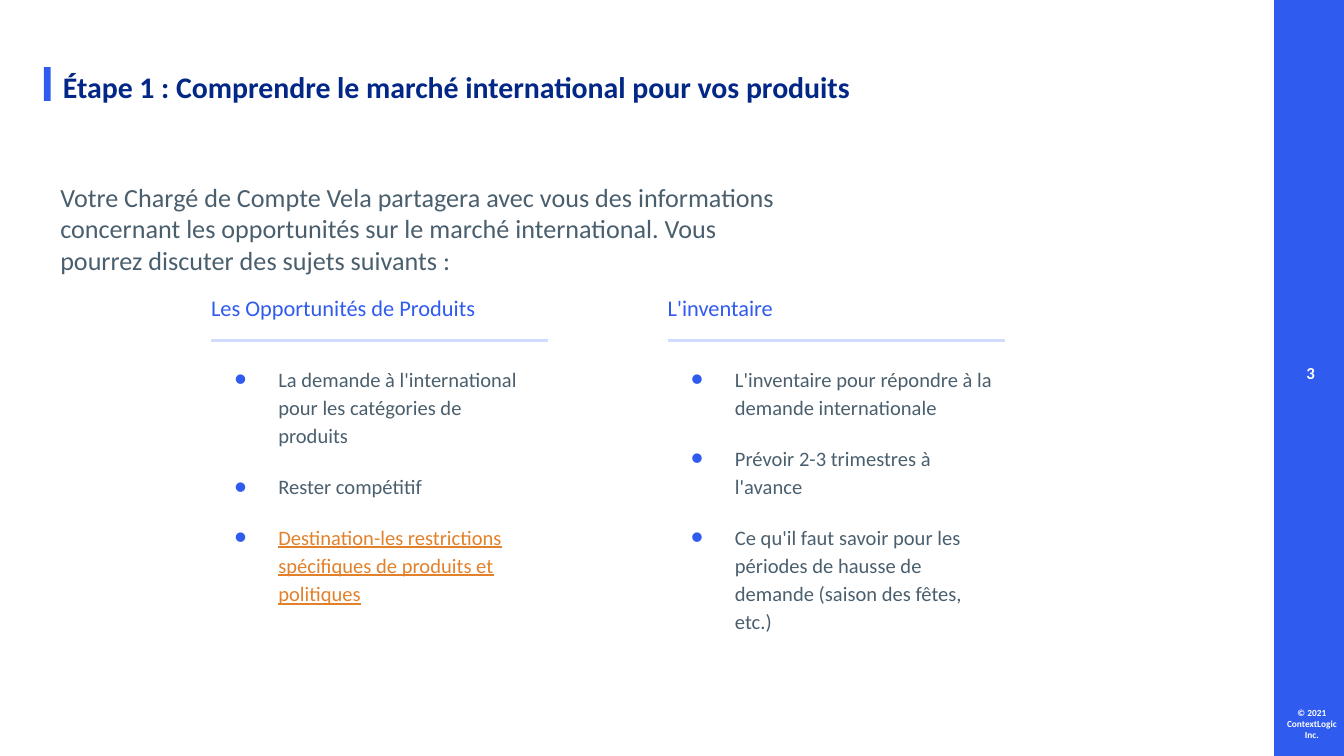
from lxml import etree
from pptx import Presentation
from pptx.dml.color import RGBColor
from pptx.enum.shapes import MSO_CONNECTOR, MSO_SHAPE
from pptx.enum.text import MSO_ANCHOR, MSO_AUTO_SIZE, PP_ALIGN
from pptx.oxml.ns import qn
from pptx.util import Cm, Pt

LEFT, CENTER = PP_ALIGN.LEFT, PP_ALIGN.CENTER
TOP, NO_FIT = MSO_ANCHOR.TOP, MSO_AUTO_SIZE.NONE
RECT, STRAIGHT = MSO_SHAPE.RECTANGLE, MSO_CONNECTOR.STRAIGHT

FONT = "Calibri"
BLUE, NAVY, PALE = "305BEF", "022786", "D0DBFF"
GREY, ORANGE, WHITE = "4A5F6E", "E3812B", "FFFFFF"
WIDTH, HEIGHT = 25.4, 14.29
PAD = 0.25
RULE_WIDTH = 6.37


def rgb(color):
    """Turn a hex string into a colour."""
    return RGBColor.from_string(color)


def setup_frame(sp, box, insets):
    """Place a text shape and return its wrapped, top-anchored frame."""
    sp.left, sp.top, sp.width, sp.height = map(Cm, box)
    tf = sp.text_frame
    tf.word_wrap, tf.auto_size, tf.vertical_anchor = True, NO_FIT, TOP
    tf.margin_left, tf.margin_top, tf.margin_right, tf.margin_bottom = map(Cm, insets)
    return tf


def write(p, text, size=11, color=GREY, bold=False, underline=False, align=LEFT):
    """Write formatted text into a paragraph."""
    p.alignment = align
    r = p.add_run()
    r.text = text
    font = r.font
    font.name, font.size, font.bold = FONT, Pt(size), bold
    font.color.rgb = rgb(color)
    if underline:
        font.underline = True


def add_text(s, box, text, insets=(PAD,) * 4, **fmt):
    """Add a text box with one paragraph."""
    sp = s.shapes.add_textbox(0, 0, 0, 0)
    write(setup_frame(sp, box, insets).paragraphs[0], text, **fmt)


def add_bar(s, box):
    """Add a solid blue rectangle."""
    sp = s.shapes.add_shape(RECT, *map(Cm, box))
    sp.shadow.inherit = False
    sp.fill.solid()
    sp.fill.fore_color.rgb = rgb(BLUE)
    sp.line.fill.background()


def add_rule(s, x, y, w):
    """Add a pale horizontal line."""
    sp = s.shapes.add_connector(STRAIGHT, Cm(x), Cm(y), Cm(x + w), Cm(y))
    sp.line.color.rgb = rgb(PALE)
    sp.line.width = Pt(1.5)
    etree.SubElement(sp._element.spPr, qn("a:effectLst"))


def add_bullet(p):
    """Give a paragraph a blue round bullet with a hanging indent."""
    pPr = p._p.get_or_add_pPr()
    pPr.set("marL", str(Cm(1.27)))
    pPr.set("indent", str(-Cm(0.83)))
    clr = etree.SubElement(pPr, qn("a:buClr"))
    etree.SubElement(clr, qn("a:srgbClr"), val=BLUE)
    etree.SubElement(pPr, qn("a:buFont"), typeface=FONT)
    etree.SubElement(pPr, qn("a:buChar"), char="●")


def build_title(s, box, text):
    """Place the title and the accent bar to its left."""
    x, y, w, h = box
    add_bar(s, (x - 0.36, y + 0.1, 0.13, 0.64))
    tf = setup_frame(s.shapes.title, box, (0, 0.13, 0, 0))
    write(tf.paragraphs[0], text, size=16, color=NAVY, bold=True)


def build_sidebar(s, box, number, notice):
    """Draw the side band with page number and copyright line."""
    x, y, w, h = box
    add_bar(s, box)
    fmt = dict(color=WHITE, bold=True, align=CENTER)
    add_text(s, (x + 0.03, y + 6.6, w, 1.09), number, size=9, **fmt)
    add_text(s, (x - 0.15, y + h - 1.18, 1.73, 1.18), notice, size=5, **fmt)


def build_column(s, box, heading, items):
    """Draw a heading, its rule and the bulleted list below."""
    x, y, w, h = box
    add_text(s, (x - PAD, y, 7.65, 1.12), heading, size=12, color=BLUE)
    add_rule(s, x, y + 1.12, RULE_WIDTH)
    sp = s.shapes.add_textbox(0, 0, 0, 0)
    tf = setup_frame(sp, (x, y + 1.55, w, h - 1.55), (0, 0, PAD, PAD))
    for i, (text, fmt) in enumerate(items):
        p = tf.add_paragraph() if i else tf.paragraphs[0]
        add_bullet(p)
        p.line_spacing = 1.15
        if i:
            p.space_before = Pt(12)
        write(p, text, **fmt)


def main():
    """Build the slide and save it."""
    prs = Presentation()
    prs.slide_width, prs.slide_height = Cm(WIDTH), Cm(HEIGHT)
    s = prs.slides.add_slide(prs.slide_layouts[5])
    build_sidebar(s, (24.08, 0, 1.32, HEIGHT), "3", "© 2021 ContextLogic Inc.")
    build_title(s, (1.19, 1.17, 22.83, 0.86),
                "Étape 1 : Comprendre le marché international pour vos produits")
    add_text(s, (1.14, 3.18, 13.79, 1.7),
             "Votre Chargé de Compte Vela partagera avec vous des informations "
             "concernant les opportunités sur le marché international. "
             "Vous pourrez discuter des sujets suivants :",
             insets=(0, PAD, PAD, PAD), size=14)
    build_column(s, (3.99, 5.31, 6.3, 6.5), "Les Opportunités de Produits", [
        ("La demande à l'international pour les catégories de produits", {}),
        ("Rester compétitif", {}),
        ("Destination-les restrictions spécifiques de produits et politiques",
         dict(color=ORANGE, underline=True)),
    ])
    build_column(s, (12.62, 5.31, 6.53, 6.5), "L'inventaire", [
        ("L'inventaire pour répondre à la demande internationale", {}),
        ("Prévoir 2-3 trimestres à l'avance", {}),
        ("Ce qu'il faut savoir pour les périodes de hausse de demande "
         "(saison des fêtes, etc.)", {}),
    ])
    prs.save("out.pptx")


if __name__ == "__main__":
    main()
